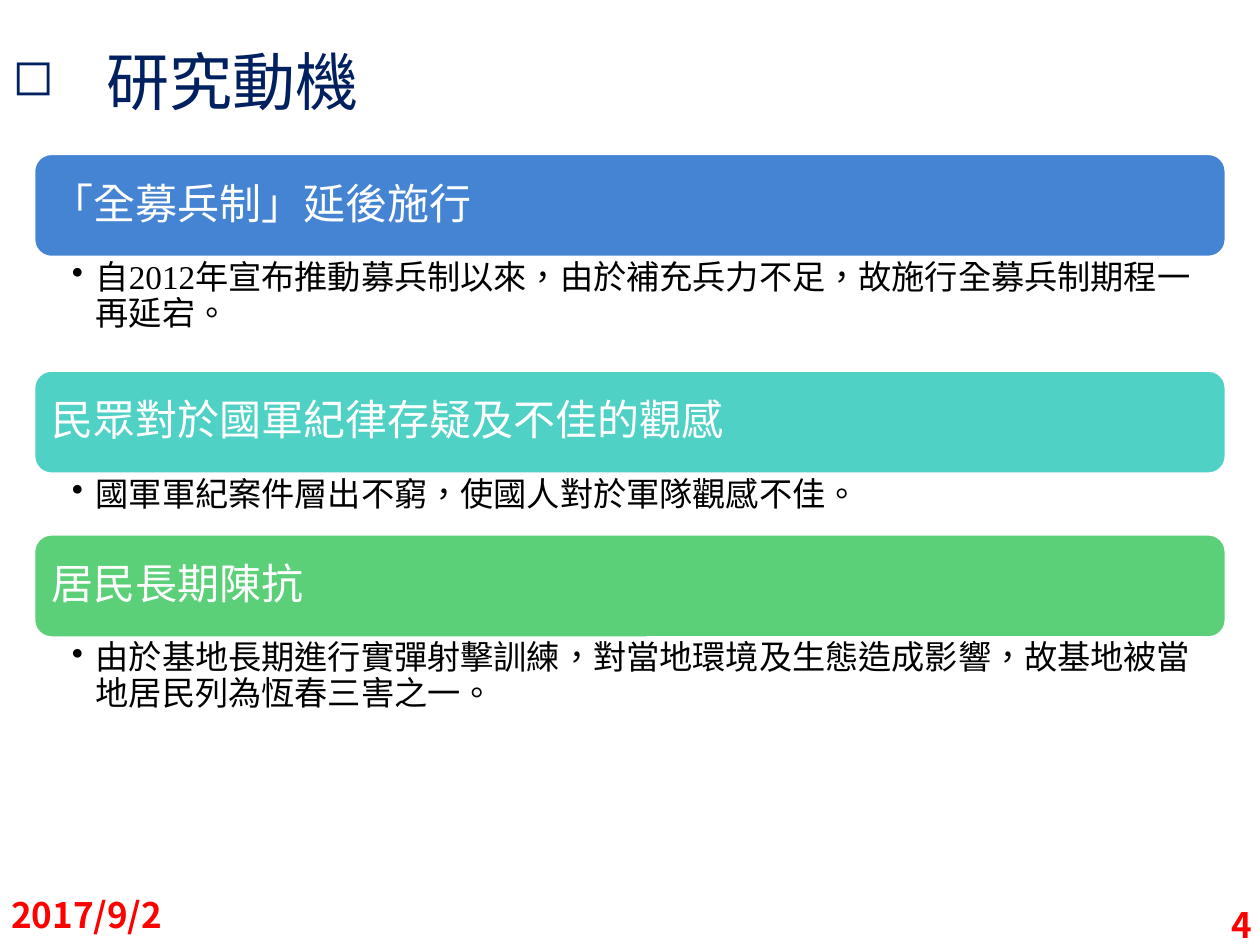
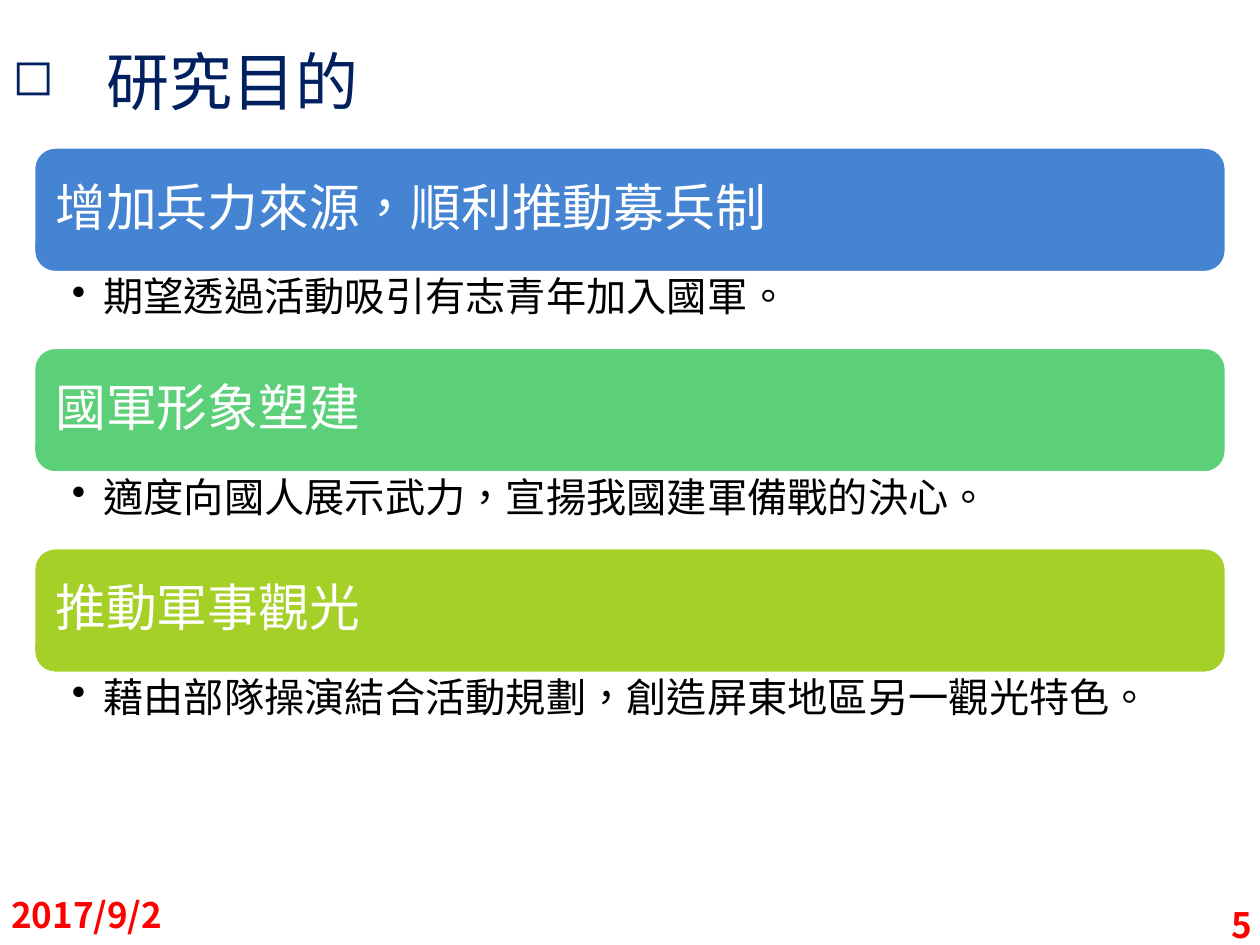
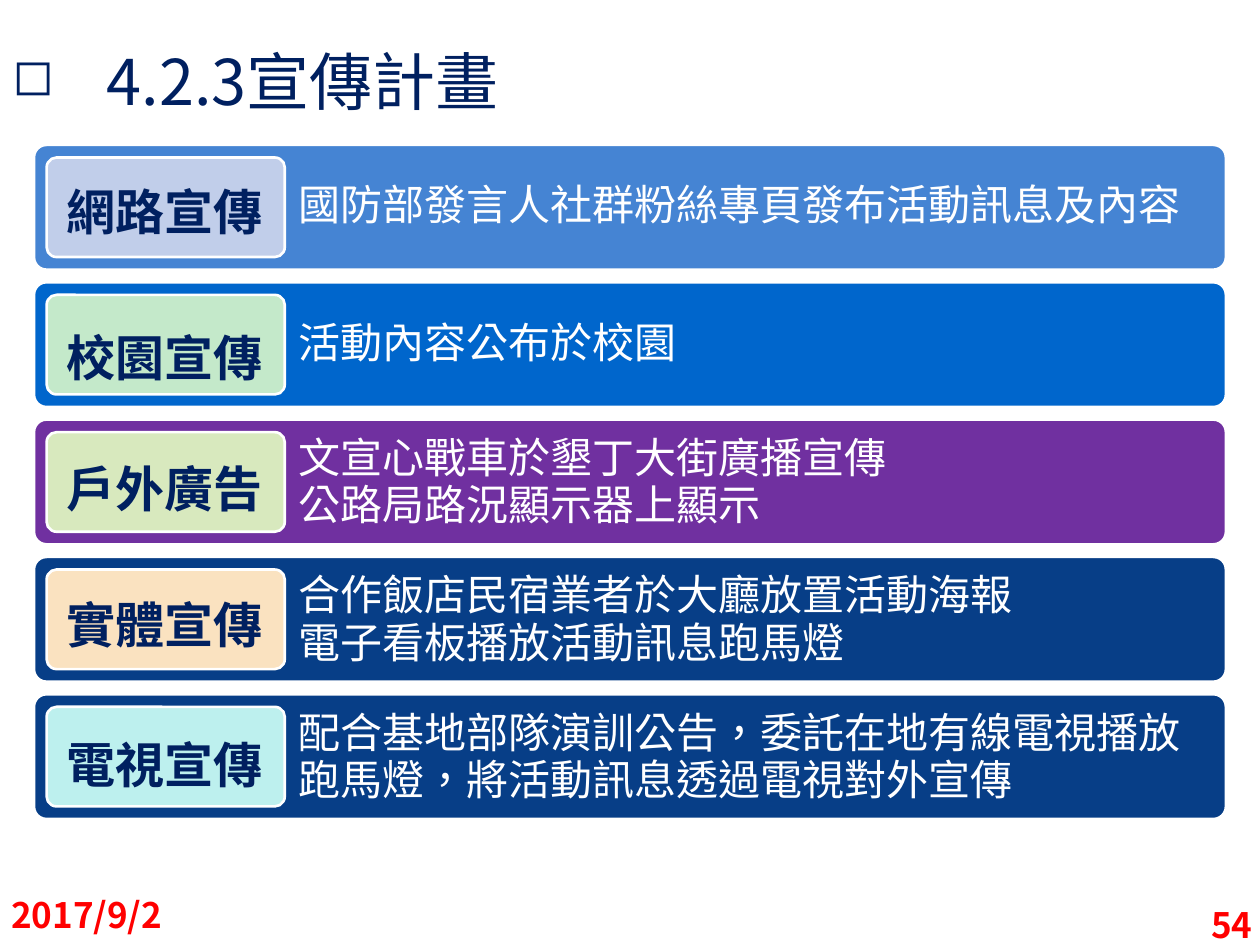
from lxml import etree
from pptx import Presentation
from pptx.dml.color import RGBColor
from pptx.enum.shapes import MSO_SHAPE
from pptx.enum.text import MSO_ANCHOR, PP_ALIGN
from pptx.oxml.ns import qn
from pptx.util import Inches, Pt

ROUNDED = MSO_SHAPE.ROUNDED_RECTANGLE
TOP, MIDDLE = MSO_ANCHOR.TOP, MSO_ANCHOR.MIDDLE
LEFT, RIGHT = PP_ALIGN.LEFT, PP_ALIGN.RIGHT

# Shared fonts and colours
MAIN_FONT = "Noto Sans CJK SC"
WHITE = RGBColor(0xFF, 0xFF, 0xFF)
BLACK = RGBColor(0x00, 0x00, 0x00)
NAVY = RGBColor(0x00, 0x20, 0x60)
RED = RGBColor(0xFF, 0x00, 0x00)
BLUE = RGBColor(0x45, 0x84, 0xD3)
TURQUOISE = RGBColor(0x50, 0xD1, 0xC5)
GREEN = RGBColor(0x5B, 0xD0, 0x78)
LIME = RGBColor(0xA5, 0xD0, 0x28)
BRIGHT_BLUE = RGBColor(0x00, 0x66, 0xCC)
PURPLE = RGBColor(0x70, 0x30, 0xA0)
DEEP_BLUE = RGBColor(0x07, 0x3E, 0x87)
PALE_BLUE = RGBColor(0xC1, 0xCE, 0xEA)
PALE_GREEN = RGBColor(0xC4, 0xE9, 0xCA)
PALE_LIME = RGBColor(0xD8, 0xE9, 0xBE)
PALE_ORANGE = RGBColor(0xFA, 0xE2, 0xC0)
PALE_TURQUOISE = RGBColor(0xBD, 0xF0, 0xEE)
TEXT_OUTLINE = "80A611"

# Shared grid, in inches
SLIDE_WIDTH, SLIDE_HEIGHT = 10, 7.5
MARGIN = 0.27
BAR_WIDTH = SLIDE_WIDTH - 2 * MARGIN
FOOTER_WIDTH, FOOTER_HEIGHT = 2.33, 0.4


def write_text(shape, paragraphs, size, color, font=MAIN_FONT, bold=False, align=LEFT,
               anchor=MIDDLE, insets=(0.1, 0.05, 0.1, 0.05), spacing=None,
               bullet=None, bullet_percent=100, indent=0, outline=None):
    """Write paragraphs; each is a string or a list of (text, font) runs."""
    frame = shape.text_frame
    frame.word_wrap = True
    frame.vertical_anchor = anchor
    (frame.margin_left, frame.margin_top,
     frame.margin_right, frame.margin_bottom) = map(Inches, insets)
    for number, content in enumerate(paragraphs):
        paragraph = frame.add_paragraph() if number else frame.paragraphs[0]
        paragraph.alignment = align
        paragraph.line_spacing = spacing
        if bullet:
            properties = paragraph._p.get_or_add_pPr()
            properties.set("marL", str(Inches(indent)))
            properties.set("indent", str(-Inches(indent)))
            etree.SubElement(properties, qn("a:buSzPct")).set("val", str(bullet_percent * 1000))
            etree.SubElement(properties, qn("a:buChar")).set("char", bullet)
        runs = [(content, font)] if isinstance(content, str) else content
        for text, run_font in runs:
            run = paragraph.add_run()
            run.text = text
            run.font.size = Pt(size)
            run.font.bold = bold
            run.font.color.rgb = color
            run.font.name = run_font
            # East Asian typeface, with traditional Chinese glyph forms
            properties = run._r.get_or_add_rPr()
            properties.set("lang", "zh-TW")
            latin = properties.find(qn("a:latin"))
            latin.addnext(etree.Element(qn("a:ea"), typeface=MAIN_FONT))
            if outline:
                line = etree.Element(qn("a:ln"), w=str(Pt(0.71)))
                fill = etree.SubElement(line, qn("a:solidFill"))
                etree.SubElement(fill, qn("a:srgbClr")).set("val", outline)
                properties.insert(0, line)


def add_bar(slide, left, top, width, height, color, rounding=0.17):
    bar = slide.shapes.add_shape(ROUNDED, *map(Inches, (left, top, width, height)))
    bar.shadow.inherit = False
    bar.adjustments[0] = rounding
    bar.fill.solid()
    bar.fill.fore_color.rgb = color
    bar.line.color.rgb = WHITE
    bar.line.width = Pt(1.5)
    return bar


presentation = Presentation()
presentation.slide_width = Inches(SLIDE_WIDTH)
presentation.slide_height = Inches(SLIDE_HEIGHT)
blank_layout = presentation.slide_layouts[6]

# Title, date and page number on every slide
slides = []
for title, page in (("研究動機", "4"), ("研究目的", "5"), ("4.2.3宣傳計畫", "54")):
    slide = presentation.slides.add_slide(blank_layout)
    slides.append(slide)
    title_box = slide.shapes.add_textbox(0, Inches(0.13), Inches(SLIDE_WIDTH), Inches(1.02))
    write_text(title_box, [title], 36, NAVY, bullet="◻", bullet_percent=80, indent=0.75)
    for text, left, top, align in (("2017/9/2", -0.01, 7.06, LEFT), (page, 7.71, 7.14, RIGHT)):
        footer = slide.shapes.add_textbox(
            *map(Inches, (left, top, FOOTER_WIDTH, FOOTER_HEIGHT)))
        write_text(footer, [text], 20, RED, bold=True, align=align)

# Motives and goals: heading bars stacked with bulleted explanations
motives = [
    ("「全募兵制」延後施行", BLUE, 0.9,
     [("自", MAIN_FONT), ("2012", "Times New Roman"),
      ("年宣布推動募兵制以來，由於補充兵力不足，故施行全募兵制期程一再延宕。", MAIN_FONT)]),
    ("民眾對於國軍紀律存疑及不佳的觀感", TURQUOISE, 0.48,
     "國軍軍紀案件層出不窮，使國人對於軍隊觀感不佳。"),
    ("居民長期陳抗", GREEN, 0.9,
     "由於基地長期進行實彈射擊訓練，對當地環境及生態造成影響，故基地被當地居民列為恆春三害之一。"),
]
goals = [
    ("增加兵力來源，順利推動募兵制", BLUE, 0.6,
     [("期望透過活動吸引有志青年加入國軍", MAIN_FONT), ("。", "Calibri")]),
    ("國軍形象塑建", GREEN, 0.6, "適度向國人展示武力，宣揚我國建軍備戰的決心。"),
    ("推動軍事觀光", LIME, 0.6, "藉由部隊操演結合活動規劃，創造屏東地區另一觀光特色。"),
]
# slide, sections, first top, bar height, heading size and inset, body size, indent, insets
stacks = [
    (slides[0], motives, 1.22, 0.82, 24, 0.1, 19, 0.19, (0.3, 0.03, 0.19, 0.03)),
    (slides[1], goals, 1.17, 0.99, 29, 0.12, 23, 0.25, (0.3, 0.04, 0.23, 0.04)),
]
for (slide, sections, top, bar_height, heading_size, heading_inset,
     body_size, body_indent, body_insets) in stacks:
    for heading, color, body_height, body in sections:
        bar = add_bar(slide, MARGIN, top, BAR_WIDTH, bar_height, color)
        write_text(bar, [heading], heading_size, WHITE, spacing=0.9,
                   insets=[heading_inset] * 4)
        top += bar_height
        body_box = slide.shapes.add_textbox(
            *map(Inches, (MARGIN, top, BAR_WIDTH, body_height)))
        write_text(body_box, [body], body_size, BLACK, anchor=TOP, spacing=0.9,
                   insets=body_insets, bullet="•", indent=body_indent)
        top += body_height

# Publicity plan: five channels, each a bar with a labelled card
ROW_TOP, ROW_PITCH, ROW_HEIGHT = 1.15, 1.09, 0.99
CARD_GAP, CARD_WIDTH = 0.1, 1.89
DETAIL_LEFT = 2 * CARD_GAP + CARD_WIDTH - 0.02
# label, distance of label from row top, bar, card, details, spacing, font
channels = [
    ("網路宣傳", 0.24, BLUE, PALE_BLUE,
     ["國防部發言人社群粉絲專頁發布活動訊息及內容"], 0.9, MAIN_FONT),
    ("校園宣傳", 0.31, BRIGHT_BLUE, PALE_GREEN, ["活動內容公布於校園"], 0.9, MAIN_FONT),
    ("戶外廣告", 0.26, PURPLE, PALE_LIME,
     ["文宣心戰車於墾丁大街廣播宣傳", "公路局路況顯示器上顯示"], Pt(27), MAIN_FONT),
    ("實體宣傳", 0.25, DEEP_BLUE, PALE_ORANGE,
     ["合作飯店民宿業者於大廳放置活動海報", "電子看板播放活動訊息跑馬燈"], Pt(27), MAIN_FONT),
    ("電視宣傳", 0.27, DEEP_BLUE, PALE_TURQUOISE,
     ["配合基地部隊演訓公告，委託在地有線電視播放跑馬燈，將活動訊息透過電視對外宣傳"],
     Pt(27), "Calibri"),
]
slide = slides[2]
for row, (label, label_drop, bar_color, card_color, details, spacing, font) in enumerate(channels):
    top = ROW_TOP + row * ROW_PITCH
    bar = add_bar(slide, MARGIN, top, BAR_WIDTH, ROW_HEIGHT, bar_color, rounding=0.1)
    write_text(bar, details, 24, WHITE, font=font, spacing=spacing,
               insets=(DETAIL_LEFT, 0.1, 0.1, 0.1))
    add_bar(slide, MARGIN + CARD_GAP, top + CARD_GAP, CARD_WIDTH,
            ROW_HEIGHT - 2 * CARD_GAP, card_color, rounding=0.1)
    label_box = slide.shapes.add_textbox(
        *map(Inches, (0.43, top + label_drop, 1.81, 0.57)))
    write_text(label_box, [label], 28, NAVY, bold=True, anchor=TOP, outline=TEXT_OUTLINE)

presentation.save("out.pptx")
